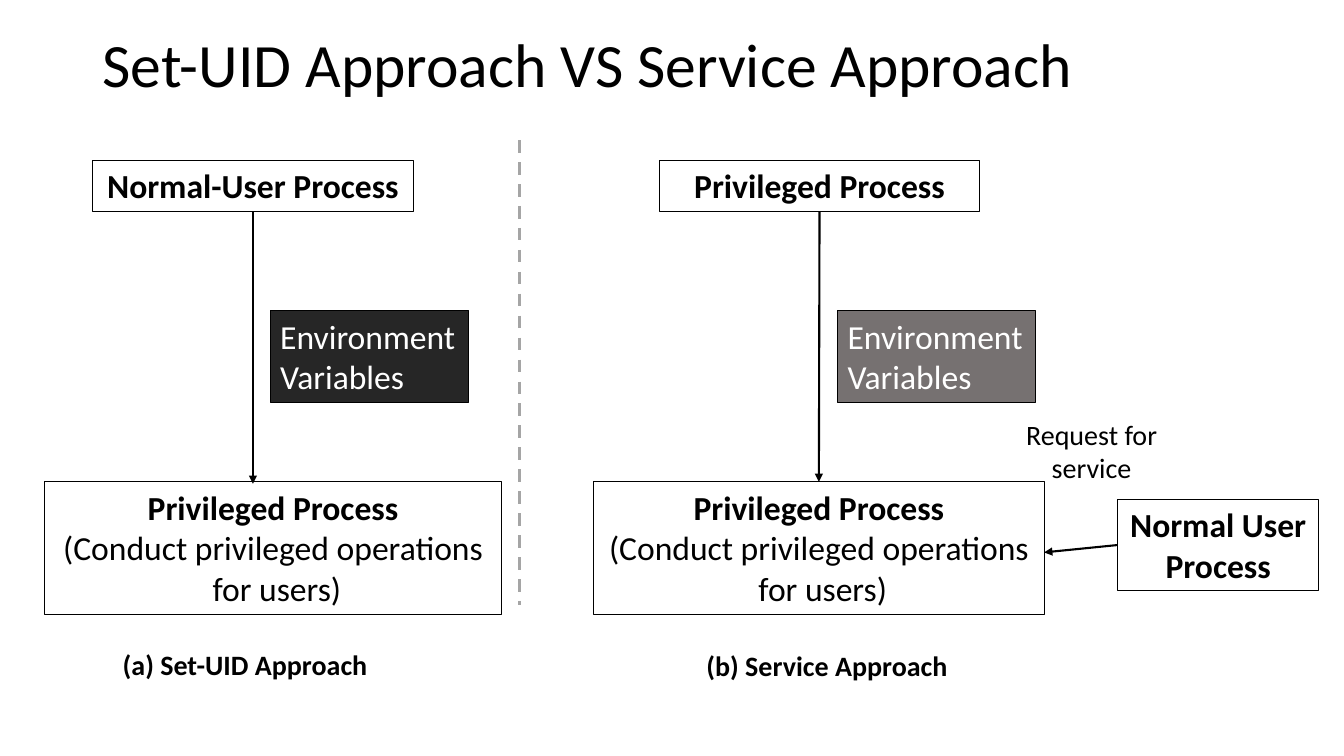
from pptx import Presentation
from pptx import util as u
from pptx.dml.color import RGBColor
from pptx.enum import dml, shapes, text
from pptx.oxml.ns import qn
from lxml import etree

# Content: each paragraph is (wording, bold)
TITLE = "Set-UID Approach VS Service Approach"
PRIVILEGED = [("Privileged Process", True),
              ("(Conduct privileged operations", False),
              (" for users)", False)]
ENVIRONMENT = [("Environment", False), ("Variables", False)]

# name: (left, top, width, height), paragraphs, fill
BOXES = {
    "user_a": ((66.2, 114.5, 229, 36.35), [("Normal-User Process", True)], None),
    "service_a": ((31.7, 344.2, 326.7, 94.5), PRIVILEGED, None),
    "user_b": ((470.9, 114.5, 229, 36.35), [("Privileged Process", True)], None),
    "service_b": ((424.1, 344.2, 321.7, 94.5), PRIVILEGED, None),
    "requester": ((798.5, 356.6, 143.3, 65.4), [("Normal User Process", True)], None),
    "env_a": ((193, 221.8, 142, 65.4), ENVIRONMENT, "262626"),
    "env_b": ((598.3, 221.8, 141.1, 65.4), ENVIRONMENT, "767171"),
}
# place, wording, bold, centred
LABELS = [
    ((80.6, 458.6, 229, 31.5), "(a) Set-UID Approach", True, False),
    ((497.5, 459.4, 229, 31.5), "(b) Service Approach", True, False),
    ((720, 294.5, 119.5, 55.7), "Request for service", False, True),
]
# start box, its side, end box and side (or None), end point
ARROWS = [
    ("user_a", 2, None, (180.7, 345.6)),
    ("user_b", 2, ("service_b", 0), (584.95, 344.2)),
    ("requester", 1, None, (745.8, 394.6)),
]
DIVIDER = (370.8, 100.1, 370.8, 432)


def rgb(code):
    return RGBColor.from_string(code)


def pts(values):
    return [u.Pt(v) for v in values]


def write(tf, paragraphs, size, color="000000", align=text.PP_ALIGN.LEFT,
          anchor=text.MSO_ANCHOR.TOP):
    tf.word_wrap = True
    tf.vertical_anchor = anchor
    for i, (words, bold) in enumerate(paragraphs):
        p = tf.paragraphs[0] if i == 0 else tf.add_paragraph()
        p.alignment = align
        r = p.add_run()
        r.text = words
        for key, value in dict(name="Calibri", size=u.Pt(size), bold=bold).items():
            setattr(r.font, key, value)
        r.font.color.rgb = rgb(color)


def add_line(s, ends, color, width):
    line = s.shapes.add_connector(shapes.MSO_CONNECTOR.STRAIGHT, *pts(ends))
    line.line.color.rgb = rgb(color)
    line.line.width = u.Pt(width)
    etree.SubElement(line._element.spPr, qn("a:effectLst"))
    return line


prs = Presentation()
prs.slide_width, prs.slide_height = pts((960, 540))
s = prs.slides.add_slide(prs.slide_layouts[5])

# Title
title = s.shapes.title
title.left, title.top, title.width, title.height = pts((66, 8, 828, 80.6))
write(title.text_frame, [(TITLE, False)], 44, anchor=text.MSO_ANCHOR.MIDDLE)
title.text_frame.paragraphs[0].line_spacing = 0.9

# Process and environment boxes
made = {}
for name, (place, paragraphs, fill) in BOXES.items():
    sp = made[name] = s.shapes.add_shape(shapes.MSO_SHAPE.RECTANGLE, *pts(place))
    sp.shadow.inherit = False
    sp.line.color.rgb = rgb("000000")
    sp.line.width = u.Pt(0.75)
    if fill:
        sp.fill.solid()
        sp.fill.fore_color.rgb = rgb(fill)
        write(sp.text_frame, paragraphs, 24, "FFFFFF")
    else:
        sp.fill.background()
        write(sp.text_frame, paragraphs, 24, align=text.PP_ALIGN.CENTER)

# Captions and arrow label
for place, words, bold, centred in LABELS:
    tf = s.shapes.add_textbox(*pts(place)).text_frame
    write(tf, [(words, bold)], 20,
          align=text.PP_ALIGN.CENTER if centred else text.PP_ALIGN.LEFT)

# Arrows
for start, side, target, end in ARROWS:
    arrow = add_line(s, end + end, "000000", 1.5)
    arrow.begin_connect(made[start], side)
    if target:
        arrow.end_connect(made[target[0]], target[1])
    etree.SubElement(arrow.line._get_or_add_ln(), qn("a:tailEnd"), type="triangle")

# Divider between the two approaches
divider = add_line(s, DIVIDER, "A5A5A5", 2.25)
divider.line.dash_style = dml.MSO_LINE.DASH

prs.save("out.pptx")
